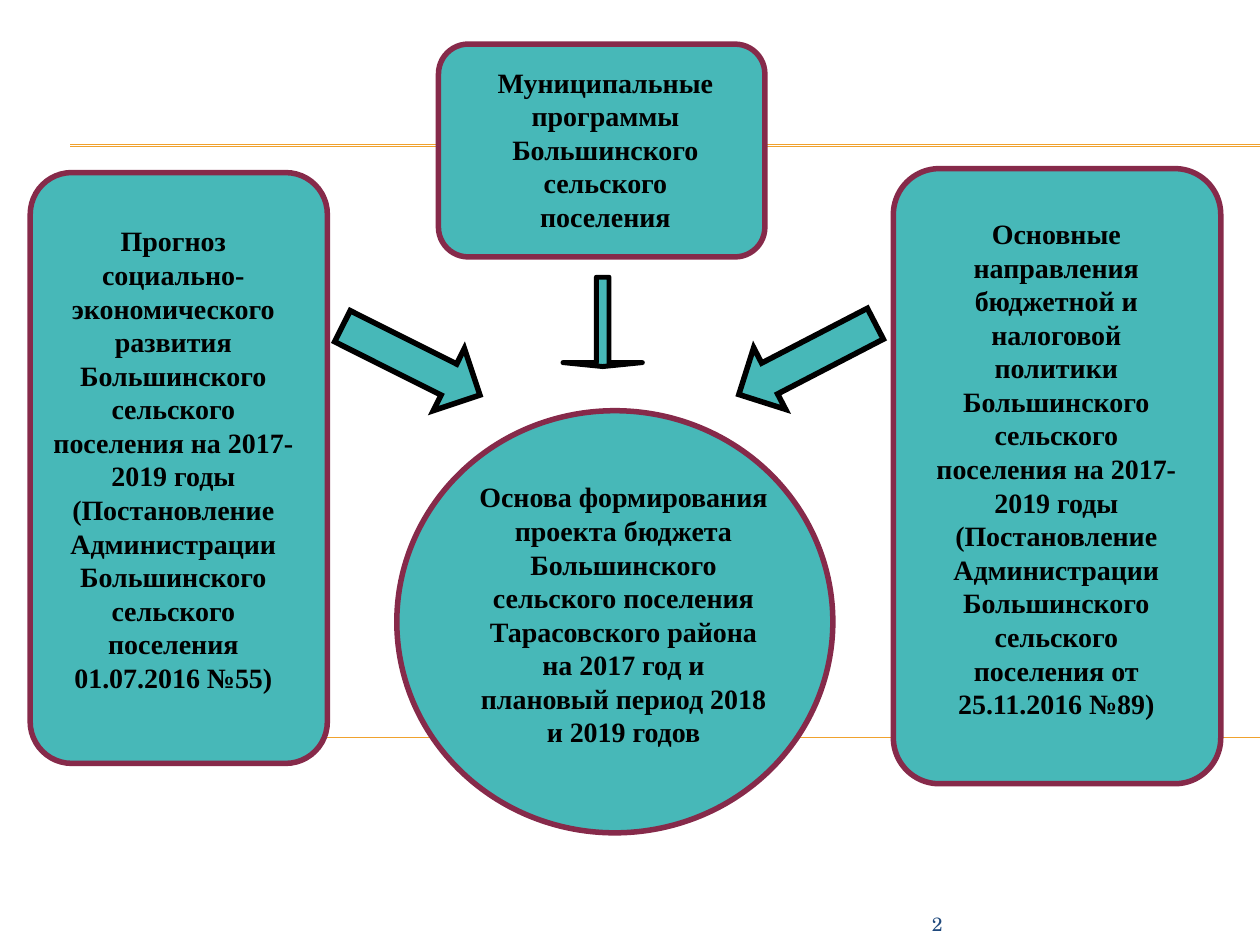
from lxml.etree import SubElement
from pptx import Presentation
from pptx.dml.color import RGBColor
from pptx.enum.shapes import MSO_CONNECTOR, MSO_SHAPE as SHAPE
from pptx.enum.text import MSO_ANCHOR, PP_ALIGN as ALIGN
from pptx.oxml.ns import qn
from pptx.util import Cm, Pt

TEAL, PLUM, BLACK, AMBER, NAVY = "47B8B8", "862A4A", "000000", "F0A22E", "1F497D"
BODY_FONT, NUMBER_FONT = "Times New Roman", "TeX Gyre Schola"

RULES = [2.92, 2.95, 14.86]
RULE_LEFT, RULE_RIGHT = 1.42, 25.4

BLOCKS = [
    (SHAPE.OVAL, (8, 8.28, 8.79, 8.51), (9.37, 9.55, 6.4, 5.66), [
        "Основа формирования",
        "проекта бюджета Большинского сельского поселения",
        "Тарасовского района на 2017 год и плановый период 2018 и 2019 годов",
    ]),
    (SHAPE.ROUNDED_RECTANGLE, (0.61, 3.48, 5.99, 11.91), (0.69, 4.39, 5.61, 10.39), [
        "Прогноз",
        "социально-",
        "экономического",
        "развития",
        "Большинского сельского поселения на 2017-2019 годы",
        "(Постановление Администрации Большинского сельского поселения 01.07.2016 №55)",
    ]),
    (SHAPE.ROUNDED_RECTANGLE, (8.84, 0.89, 6.58, 4.29), (9.4, 1.19, 5.61, 3.63), [
        "Муниципальные программы Большинского сельского поселения",
    ]),
    (SHAPE.ROUNDED_RECTANGLE, (18.01, 3.4, 6.6, 12.4), (18.59, 4.24, 5.41, 10.36), [
        "Основные направления бюджетной и налоговой политики Большинского сельского "
        "поселения на 2017-2019 годы (Постановление Администрации Большинского "
        "сельского поселения от 25.11.2016 №89)",
    ]),
]

ARROWS = [
    ((15.57, 5.69, 1.4, 3.1), 62.6, (0.5, 0.5), 3.15, "miter"),
    ((7.59, 5.72, 1.4, 3.1), 296.6, (0.5, 0.5), 3.15, "miter"),
    ((11.35, 5.59, 1.6, 1.8), 0, (0.16, 0.05), 2.83, "round"),
]


def rgb(color):
    return RGBColor.from_string(color)


def cm(box):
    return [Cm(v) for v in box]


def add_rule(s, y):
    line = s.shapes.add_connector(
        MSO_CONNECTOR.STRAIGHT, *cm((RULE_LEFT, y, RULE_RIGHT, y)))
    line.line.color.rgb = rgb(AMBER)
    line.line.width = Pt(0.75)
    SubElement(line._element.spPr, qn("a:effectLst"))


def add_figure(s, kind, box, color, width, adjustments=()):
    sp = s.shapes.add_shape(kind, *cm(box))
    sp.shadow.inherit = False
    sp.fill.solid()
    sp.fill.fore_color.rgb = rgb(TEAL)
    sp.line.color.rgb = rgb(color)
    sp.line.width = Pt(width)
    for i, value in enumerate(adjustments):
        sp.adjustments[i] = value
    return sp


def add_text(s, box, lines, font, size, color, bold, align):
    tf = s.shapes.add_textbox(*cm(box)).text_frame
    tf.word_wrap = True
    tf.text = "\n".join(lines)
    for p in tf.paragraphs:
        p.alignment = align
        p.font.name = font
        p.font.size = Pt(size)
        p.font.bold = bold
        p.font.color.rgb = rgb(color)
    return tf


prs = Presentation()
prs.slide_width, prs.slide_height = Cm(25.4), Cm(19.05)
s = prs.slides.add_slide(prs.slide_layouts[6])

for y in RULES:
    add_rule(s, y)

for kind, box, text_box, lines in BLOCKS:
    corner = (0.14,) if kind == SHAPE.ROUNDED_RECTANGLE else ()
    add_figure(s, kind, box, PLUM, 3.15, corner)
    add_text(s, text_box, lines, BODY_FONT, 16, BLACK, True, ALIGN.CENTER)

for box, angle, adjustments, width, join in ARROWS:
    sp = add_figure(s, SHAPE.DOWN_ARROW, box, BLACK, width, adjustments)
    sp.rotation = angle
    SubElement(sp.line._get_or_add_ln(), qn(f"a:{join}"))

tf = add_text(s, (17.37, 18.21, 1.63, 0.64), ["2"], NUMBER_FONT, 11, NAVY, False, ALIGN.RIGHT)
tf.vertical_anchor = MSO_ANCHOR.BOTTOM
tf.margin_left = tf.margin_right = tf.margin_top = tf.margin_bottom = 0

prs.save("out.pptx")
